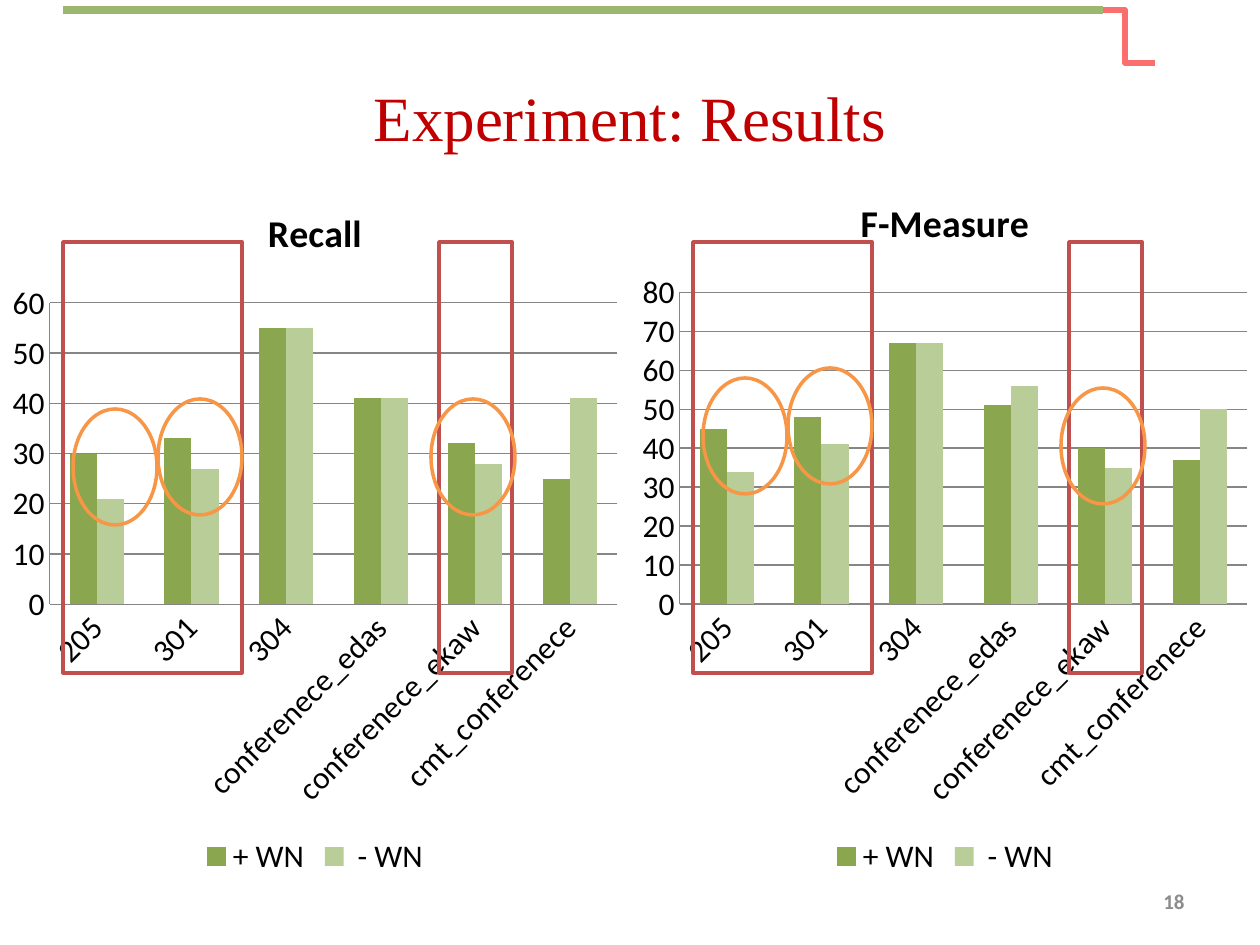
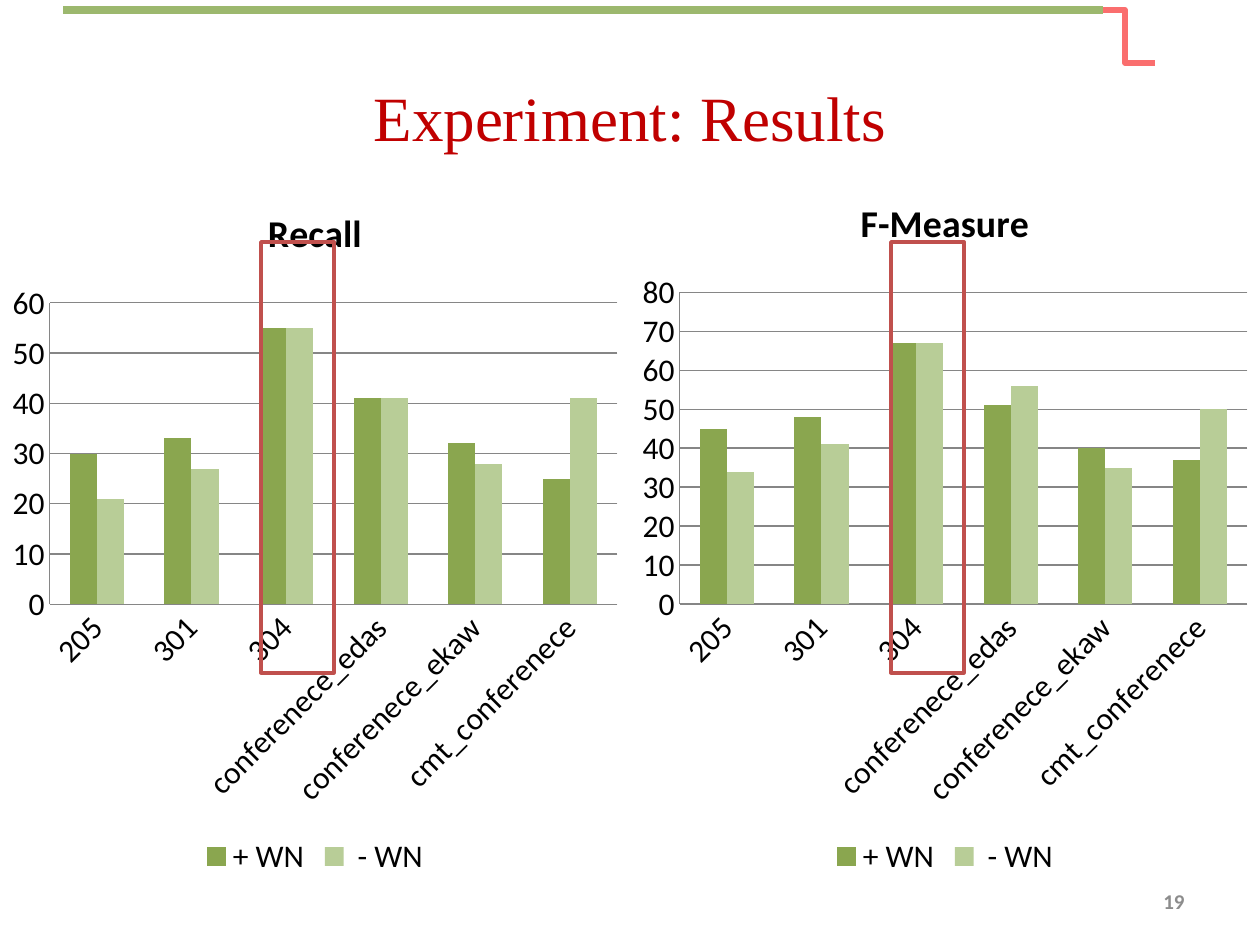
import pptx
import pptx.chart.data
import pptx.dml.color
import pptx.enum.chart
import pptx.enum.shapes
import pptx.enum.text
import pptx.oxml
import pptx.util

PX = 914400 / 126
HALF_WIDTH = 630
GREEN, CORAL, TITLE_RED, NUMBER_GREY = "9CB86E", "FA6E6E", "C00000", "8C8C8C"
BLACK, GRID_GREY, FRAME_RED, ORANGE = "000000", "868686", "C0504D", "F79646"
SERIES_COLORS = ["8AA64F", "B8CD97"]

CATEGORIES = ["205", "301", "304", "conferenece_edas", "conferenece_ekaw", "cmt_conferenece"]
# title, left, top, height, axis maximum, values with WN, values without WN
CHARTS = [
    ("Recall", 0, 179, 703, 60, [30, 33, 55, 41, 32, 25], [21, 27, 55, 41, 28, 41]),
    ("F-Measure", HALF_WIDTH, 168, 714, 80, [45, 48, 67, 51, 40, 37], [34, 41, 67, 56, 35, 50]),
]
# number, frames as (left, width) within a chart, ellipse lefts, ellipse tops per chart
SLIDES = [
    (18, [(63, 179), (439, 73)], [73, 158, 431], [(409, 399, 399), (378, 368, 388)]),
    (19, [(261, 73)], [], [(), ()]),
]


def px(*lengths):
    return [pptx.util.Emu(round(length * PX)) for length in lengths]


def rgb(color):
    return pptx.dml.color.RGBColor.from_string(color)


presentation = pptx.Presentation()
presentation.slide_width, presentation.slide_height = px(1260, 945)
connector_type = pptx.enum.shapes.MSO_CONNECTOR
shape_type = pptx.enum.shapes.MSO_SHAPE
align = pptx.enum.text.PP_ALIGN

for number, frames, ellipse_lefts, ellipse_tops in SLIDES:
    slide = presentation.slides.add_slide(presentation.slide_layouts[6])

    for kind, ends, color, width in [
        (connector_type.ELBOW, (1155, 63, 1095, 10), CORAL, 3.25),
        (connector_type.STRAIGHT, (63, 10, 1103, 10), GREEN, 4.75),
    ]:
        connector = slide.shapes.add_connector(kind, *px(*ends))
        connector.line.color.rgb = rgb(color)
        connector.line.width = pptx.util.Pt(width)
        properties = connector._element.spPr
        properties.append(properties.makeelement(pptx.oxml.ns.qn("a:effectLst"), {}))

    for text, box, alignment, font_name, size, color, bold in [
        ("Experiment: Results", (63, 38, 1134, 157), align.CENTER, "Times New Roman", 36, TITLE_RED, False),
        (str(number), (1124, 876, 73, 50), align.RIGHT, "Calibri", 12, NUMBER_GREY, True),
    ]:
        text_frame = slide.shapes.add_textbox(*px(*box)).text_frame
        text_frame.word_wrap = True
        text_frame.vertical_anchor = pptx.enum.text.MSO_ANCHOR.MIDDLE
        text_frame.text = text
        paragraph = text_frame.paragraphs[0]
        paragraph.alignment = alignment
        font = paragraph.runs[0].font
        font.name, font.size, font.bold = font_name, pptx.util.Pt(size), bold
        font.color.rgb = rgb(color)

    for title, left, top, height, maximum, with_wn, without_wn in CHARTS:
        chart_data = pptx.chart.data.CategoryChartData()
        chart_data.categories = CATEGORIES
        chart_data.add_series("+ WN", with_wn)
        chart_data.add_series(" - WN", without_wn)
        chart = slide.shapes.add_chart(
            pptx.enum.chart.XL_CHART_TYPE.COLUMN_CLUSTERED,
            *px(left, top, HALF_WIDTH, height), chart_data).chart
        chart.font.name, chart.font.size = "Calibri", pptx.util.Pt(18)
        chart.font.color.rgb = rgb(BLACK)

        chart.has_title = True
        chart.chart_title.include_in_layout = False
        chart.chart_title.text_frame.text = title
        title_font = chart.chart_title.text_frame.paragraphs[0].runs[0].font
        title_font.name, title_font.size, title_font.bold = "Calibri", pptx.util.Pt(21.6), True
        title_font.color.rgb = rgb(BLACK)

        chart.has_legend = True
        chart.legend.position = pptx.enum.chart.XL_LEGEND_POSITION.BOTTOM
        chart.legend.include_in_layout = False

        for axis in (chart.category_axis, chart.value_axis):
            axis.major_tick_mark = pptx.enum.chart.XL_TICK_MARK.NONE
            axis.format.line.color.rgb = rgb(GRID_GREY)
        value_axis = chart.value_axis
        value_axis.minimum_scale, value_axis.maximum_scale = 0, maximum
        value_axis.major_unit = 10
        value_axis.major_gridlines.format.line.color.rgb = rgb(GRID_GREY)

        plot = chart.plots[0]
        plot.gap_width, plot.overlap, plot.vary_by_categories = 150, 0, False
        for series, color in zip(plot.series, SERIES_COLORS):
            series.format.fill.solid()
            series.format.fill.fore_color.rgb = rgb(color)

    highlights = []
    for (_, chart_left, *_), tops in zip(CHARTS, ellipse_tops):
        for left, width in frames:
            highlights.append((shape_type.RECTANGLE, (chart_left + left, 242, width, 431), FRAME_RED))
        for left, top in zip(ellipse_lefts, tops):
            highlights.append((shape_type.OVAL, (chart_left + left, top, 84, 116), ORANGE))

    for kind, box, color in highlights:
        shape = slide.shapes.add_shape(kind, *px(*box))
        shape.shadow.inherit = False
        shape.fill.background()
        shape.line.color.rgb = rgb(color)
        shape.line.width = pptx.util.Pt(2)

presentation.save("out.pptx")
